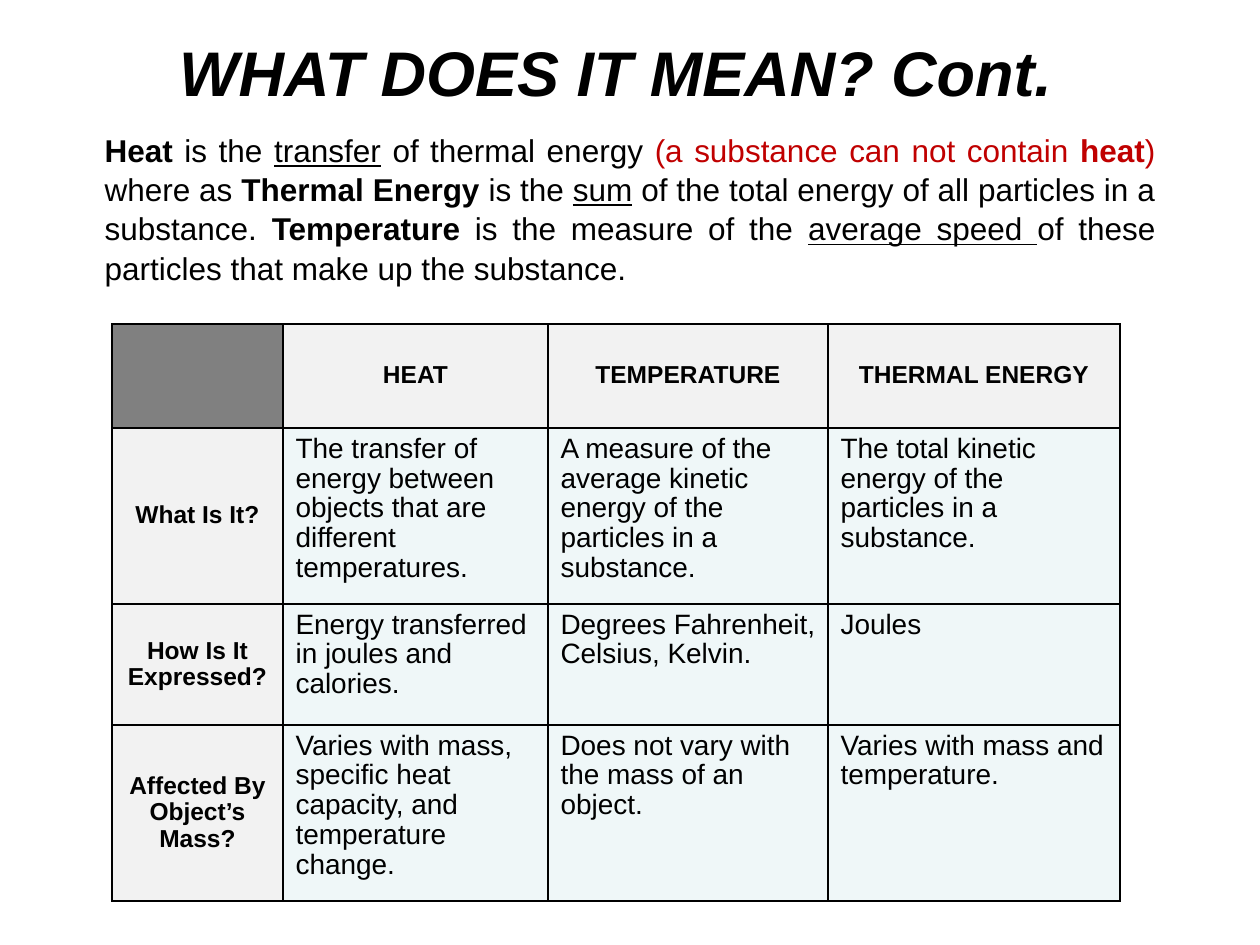
"""Build a slide that compares heat, temperature and thermal energy."""
from lxml.etree import SubElement
from pptx import Presentation
from pptx.dml.color import RGBColor
from pptx.enum.text import MSO_ANCHOR, MSO_AUTO_SIZE, PP_ALIGN
from pptx.oxml import parse_xml
from pptx.oxml.ns import nsdecls, qn
from pptx.util import Pt

PX = 914400 / 126
BLACK, RED, GRAY, PALE, AQUA = "000000", "C00000", "808080", "F2F2F2", "BBE0E3"


def px(*sizes):
    return [round(size * PX) for size in sizes]


def write(para, text, size=18, color=BLACK, bold=False, italic=False, under=False):
    run = para.add_run()
    run.text = text
    font = run.font
    font.name, font.size = "Arial", Pt(size)
    font.bold, font.italic, font.underline = bold, italic, under
    font.color.rgb = RGBColor.from_string(color)


deck = Presentation()
deck.slide_width, deck.slide_height = px(1260, 945)
slide = deck.slides.add_slide(deck.slide_layouts[1])
title, body = slide.placeholders

title.left, title.top, title.width, title.height = px(98, 14, 1036, 242)
frame = title.text_frame
frame.auto_size = MSO_AUTO_SIZE.NONE
frame.vertical_anchor = MSO_ANCHOR.TOP
frame.margin_top, = px(20)
para = frame.paragraphs[0]
para.alignment = PP_ALIGN.CENTER
write(para, "WHAT DOES IT MEAN? Cont.", size=36, bold=True, italic=True)

body.left, body.top, body.width, body.height = px(92, 123, 1076, 165)
frame = body.text_frame
frame.auto_size = MSO_AUTO_SIZE.NONE
para = frame.paragraphs[0]
para.alignment = PP_ALIGN.JUSTIFY
para.space_before, para.line_spacing = Pt(0), 1.04
props = para._p.get_or_add_pPr()
props.set("marL", "0")
props.set("indent", "0")
SubElement(props, qn("a:buNone"))
for text, style in [
    ("Heat", {"bold": True}),
    (" is the ", {}),
    ("transfer", {"under": True}),
    (" of thermal energy ", {}),
    ("(a substance can not contain ", {"color": RED}),
    ("heat", {"color": RED, "bold": True}),
    (") ", {"color": RED}),
    ("where as ", {}),
    ("Thermal Energy ", {"bold": True}),
    ("is the ", {}),
    ("sum", {"under": True}),
    (" of the total energy of all particles in a substance. ", {}),
    ("Temperature", {"bold": True}),
    (" is the measure of the ", {}),
    ("average speed ", {"under": True}),
    ("of these particles that make up the substance.", {}),
]:
    write(para, text, **style)

rows = [
    ["", "HEAT", "TEMPERATURE", "THERMAL ENERGY"],
    ["What Is It?",
     "The transfer of energy between objects that are different temperatures.",
     "A measure of the average kinetic energy of the particles in a substance.",
     "The total kinetic energy of the particles in a substance."],
    ["How Is It Expressed?",
     "Energy transferred in joules and calories.",
     "Degrees Fahrenheit, Celsius, Kelvin.",
     "Joules"],
    ["Affected By Object’s Mass?",
     "Varies with mass, specific heat capacity, and temperature change.",
     "Does not vary with the mass of an object.",
     "Varies with mass and temperature."],
]
wide, high = [171, 265, 280, 292], [104, 176, 121, 176]
grid = slide.shapes.add_table(4, 4, *px(112, 324, sum(wide), sum(high))).table
grid.first_row = grid.horz_banding = False
for col, size in zip(grid.columns, px(*wide)):
    col.width = size
for row, size in zip(grid.rows, px(*high)):
    row.height = size

for r, texts in enumerate(rows):
    for c, text in enumerate(texts):
        cell = grid.cell(r, c)
        head = r == 0 or c == 0
        tint = (PALE if text else GRAY) if head else AQUA
        cell.fill.solid()
        cell.fill.fore_color.rgb = RGBColor.from_string(tint)
        props = cell._tc.get_or_add_tcPr()
        if not head:
            shade = props.find(".//" + qn("a:srgbClr"))
            SubElement(shade, qn("a:alpha"), val="23000")
        for place, side in enumerate("LRTB"):
            props.insert(place, parse_xml(
                f'<a:ln{side} {nsdecls("a")} w="12700"><a:solidFill>'
                f'<a:srgbClr val="{BLACK}"/></a:solidFill></a:ln{side}>'))
        if text:
            para = cell.text_frame.paragraphs[0]
            para.line_spacing = 0.96
            para.alignment = PP_ALIGN.CENTER if head else PP_ALIGN.LEFT
            cell.vertical_anchor = MSO_ANCHOR.MIDDLE if head else MSO_ANCHOR.TOP
            write(para, text, size=14 if head else 16, bold=head)

deck.save("out.pptx")
